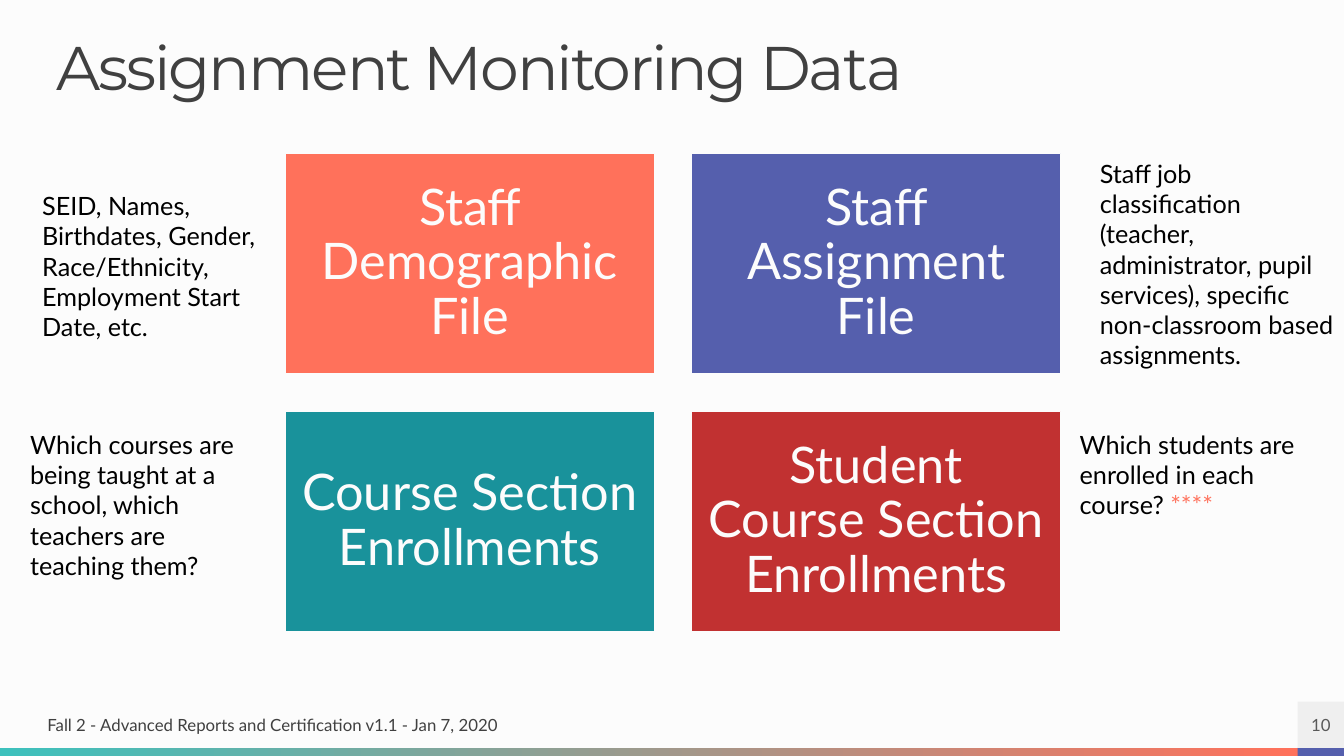
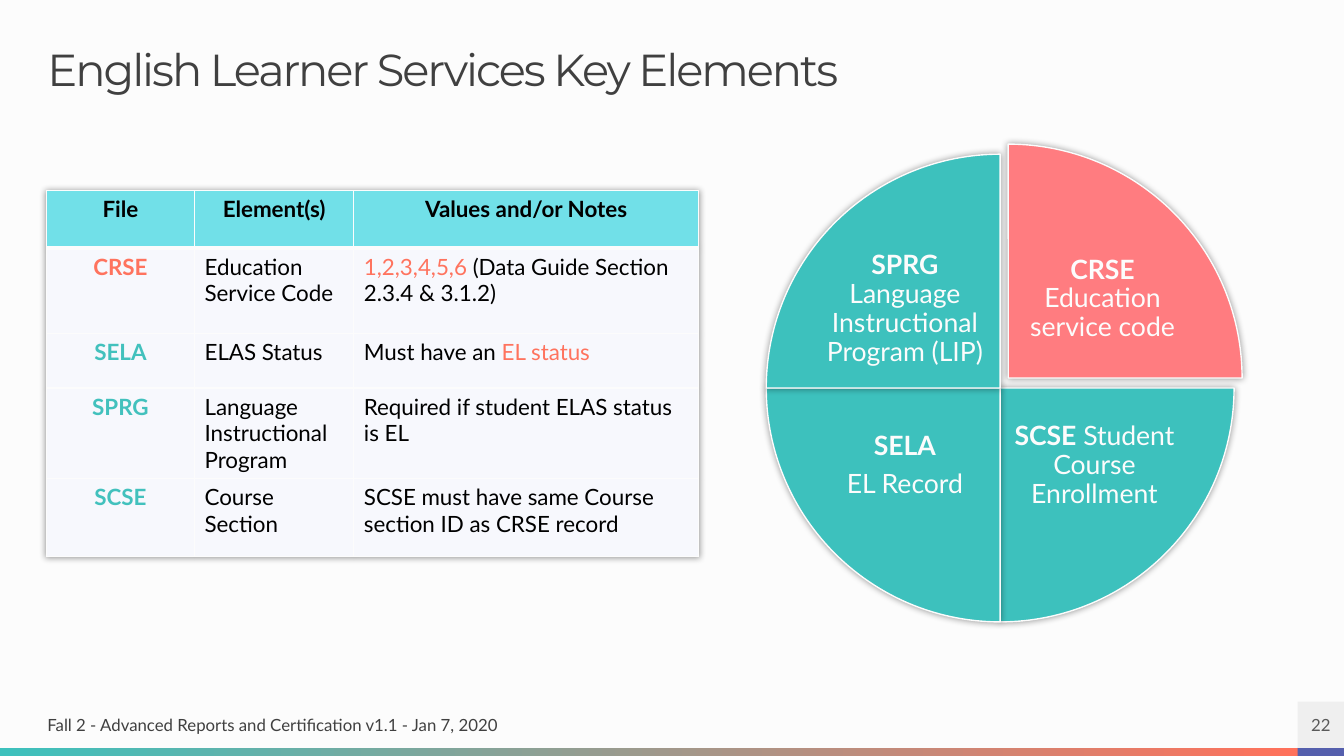
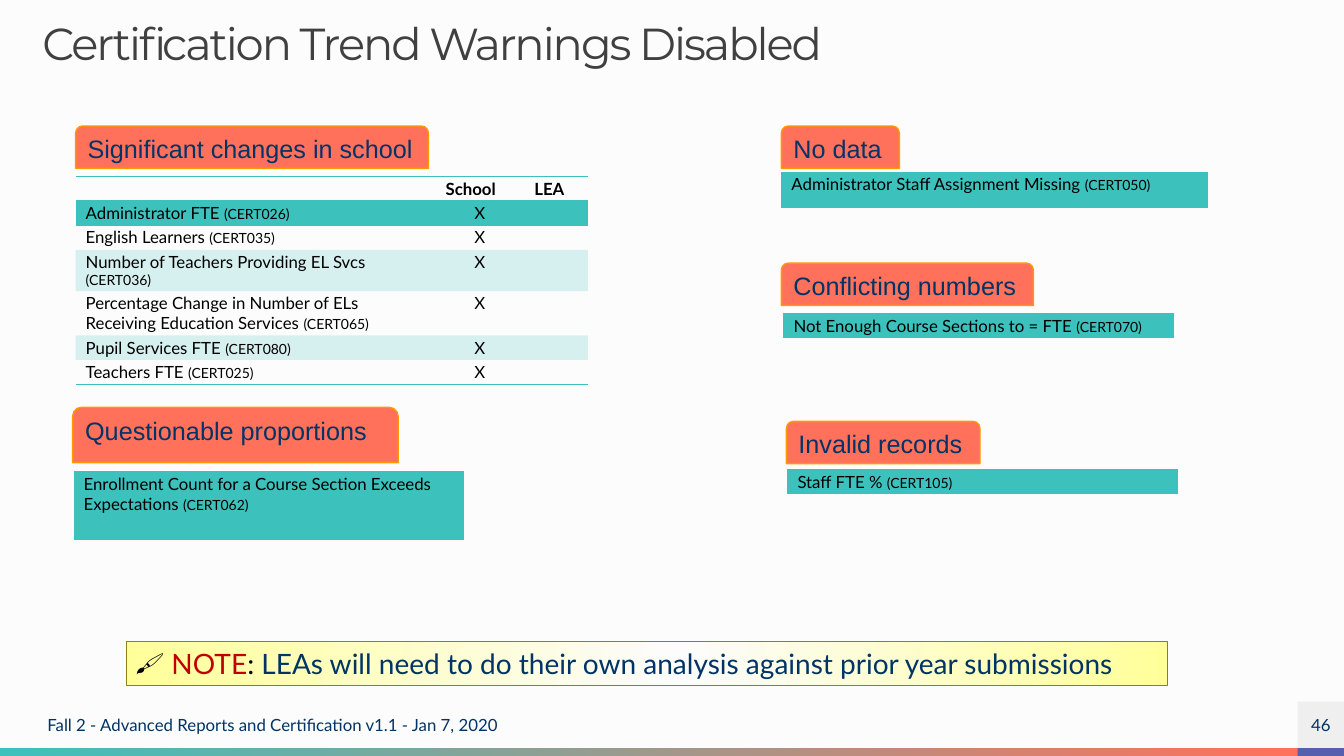
from dataclasses import dataclass

from lxml.etree import SubElement
from pptx import Presentation
from pptx.dml.color import RGBColor
from pptx.enum.shapes import MSO_SHAPE
from pptx.enum.text import MSO_ANCHOR, MSO_AUTO_SIZE, PP_ALIGN
from pptx.oxml.ns import qn
from pptx.util import Inches, Pt


@dataclass(frozen=True)
class Theme:
    heading_font: str = "Montserrat"
    body_font: str = "Lato"
    tab_font: str = "Arial"
    paper: str = "FCFCFC"
    black: str = "000000"
    heading: str = "404040"
    gray: str = "595959"
    navy: str = "003366"
    teal: str = "3DC1BD"
    deep_teal: str = "19929B"
    coral: str = "FF715B"
    pink: str = "FF7C80"
    indigo: str = "555FAD"
    red: str = "C13131"
    note_red: str = "C00000"
    orange: str = "FF9900"
    yellow: str = "FFFF99"
    olive: str = "8E8016"
    badge: str = "EFEFEF"
    table_head: str = "71E0E8"
    table_body: str = "F7F8FD"
    text_coral: str = "FF735E"
    text_teal: str = "42C1BD"
    big: int = 36
    note: int = 20
    pie: int = 19
    body: int = 18
    table: int = 16
    small: int = 12
    code: int = 10


T = Theme()
WIDTH, HEIGHT = 13.33, 7.5
BADGE, BAND = 0.46, 0.08
FOOTER = "Fall 2 - Advanced Reports and Certification v1.1 - Jan 7, 2020"

# A paragraph is a list of runs; a run is a string or (string, changes).
BOLD = {"bold": True}
CORAL = {"color": T.text_coral}
TEAL_BOLD = {"color": T.text_teal, "bold": True}
CODE = {"size": T.code}

FILE_CARDS = [
    ("Staff Demographic File", T.coral),
    ("Staff Assignment File", T.indigo),
    ("Course Section Enrollments", T.deep_teal),
    ("Student Course Section Enrollments", T.red),
]
CARD_NOTES = [
    ((0.32, 1.84, 2.5, 1.62),
     ["SEID, Names, Birthdates, Gender, Race/Ethnicity, Employment Start Date, etc."]),
    ((0.2, 4.21, 2.5, 1.62),
     ["Which courses are being taught at a school, which teachers are teaching them?"]),
    ((10.81, 1.52, 2.52, 2.22),
     ["Staff job classification (teacher, administrator, pupil services), "
      "specific non-classroom based assignments."]),
    ((10.61, 4.21, 2.52, 1.01),
     ["Which students are enrolled in each course? ", ("****", CORAL)]),
]

ELEMENT_HEADS = ["File", "Element(s)", "Values and/or Notes"]
ELEMENT_ROWS = [
    [("CRSE", {**CORAL, **BOLD})], ["Education Service Code"],
    [("1,2,3,4,5,6", CORAL), " (Data Guide Section 2.3.4 & 3.1.2)"],
    [("SELA", TEAL_BOLD)], ["ELAS Status"],
    ["Must have an ", ("EL status", CORAL)],
    [("SPRG", TEAL_BOLD)], ["Language Instructional Program"],
    ["Required if student ELAS status is EL"],
    [("SCSE", TEAL_BOLD)], ["Course Section"],
    ["SCSE must have same Course section ID as CRSE record"],
]
# Quarter slices, clockwise from three o'clock: paragraphs, label left and top
SLICES = [
    ([[("SCSE", BOLD), " Student Course Enrollment"]], 10, 3.93),
    ([[("SELA", BOLD)], ["EL Record"]], 8.12, 3.93),
    ([[("SPRG", BOLD), " Language Instructional Program (LIP)"]], 8.12, 2.38),
    ([[("CRSE", BOLD), " Education service code"]], 10, 2.38),
]

SCHOOL_CHANGES = [
    ("Administrator FTE", "CERT026", 0.24),
    ("English Learners", "CERT035", 0.24),
    ("Number of Teachers Providing EL Svcs", "CERT036", 0.41),
    ("Percentage Change in Number of ELs Receiving Education Services", "CERT065", 0.44),
    ("Pupil Services FTE", "CERT080", 0.24),
    ("Teachers FTE", "CERT025", 0.24),
]
WARNING_TABS = [
    ("Significant changes in school", (0.75, 1.25, 3.5, 0.42)),
    ("No data", (7.75, 1.25, 1.17, 0.42)),
    ("Conflicting numbers", (7.75, 2.61, 2.5, 0.42)),
    ("Questionable proportions", (0.72, 4.04, 3.23, 0.55)),
    ("Invalid records", (7.8, 4.18, 1.92, 0.42)),
]
WARNINGS = [
    ("Administrator Staff Assignment Missing", "CERT050", (7.75, 1.71, 4.23, 0.35)),
    ("Not Enough Course Sections to = FTE", "CERT070", (7.77, 3.11, 3.87, 0.24)),
    ("Enrollment Count for a Course Section Exceeds Expectations", "CERT062",
     (0.73, 4.68, 3.87, 0.67)),
    ("Staff FTE %", "CERT105", (7.81, 4.66, 3.87, 0.24)),
]
NOTE = ["🖌 ", ("NOTE", {"color": T.note_red}), ": ",
        ("LEAs will need to do their own analysis against prior year submissions",
         {"color": T.navy})]


def rgb(value):
    return RGBColor.from_string(value)


def inches(values):
    return [Inches(value) for value in values]


def write(frame, paragraphs, size, color=T.black, font=T.body_font, bold=False,
          align=PP_ALIGN.LEFT, line=None, after=0):
    """Write paragraphs of runs; after is the space between paragraphs."""
    for index, runs in enumerate(paragraphs):
        para = frame.paragraphs[0] if index == 0 else frame.add_paragraph()
        para.alignment = align
        if line:
            para.line_spacing = line
        if after and index < len(paragraphs) - 1:
            para.space_after = Pt(after)
        for run in runs:
            text, changes = (run, {}) if isinstance(run, str) else run
            look = {"size": size, "color": color, "bold": bold, **changes}
            span = para.add_run()
            span.text = text
            span.font.name = font
            span.font.size = Pt(look["size"])
            span.font.bold = look["bold"]
            span.font.color.rgb = rgb(look["color"])
        if not runs:
            SubElement(para._p, qn("a:endParaRPr"), sz=str(size * 100))


def set_frame(frame, anchor=MSO_ANCHOR.TOP, inset=None):
    frame.word_wrap = True
    frame.auto_size = MSO_AUTO_SIZE.NONE
    frame.vertical_anchor = anchor
    if inset is not None:
        frame.margin_left = frame.margin_right = Inches(inset)
        frame.margin_top = frame.margin_bottom = Inches(inset)
    return frame


def add_text(slide, place, paragraphs, size, anchor=MSO_ANCHOR.TOP, inset=None, **look):
    box = slide.shapes.add_textbox(*inches(place))
    write(set_frame(box.text_frame, anchor, inset), paragraphs, size, **look)


def add_shape(slide, kind, place, fill=None, line=None, weight=1):
    shape = slide.shapes.add_shape(kind, *inches(place))
    shape.shadow.inherit = False
    if fill:
        shape.fill.solid()
        shape.fill.fore_color.rgb = rgb(fill)
    if line:
        shape.line.color.rgb = rgb(line)
        shape.line.width = Pt(weight)
    else:
        shape.line.fill.background()
    return shape


def set_gradient(shape, stops):
    shape.fill.gradient()
    shape.fill.gradient_angle = 0
    stop_list = shape.element.spPr.find(".//" + qn("a:gsLst"))
    for stop in list(stop_list):
        stop_list.remove(stop)
    for share, color in stops:
        stop = SubElement(stop_list, qn("a:gs"), pos=str(share * 1000))
        SubElement(stop, qn("a:srgbClr"), val=color)


def add_glow(effects):
    """Add a soft shadow without offset to an effect list."""
    shadow = SubElement(effects, qn("a:outerShdw"), blurRad=str(Pt(5)), dist="0")
    color = SubElement(shadow, qn("a:srgbClr"), val=T.black)
    SubElement(color, qn("a:alpha"), val="40000")


def set_borders(cell, borders):
    """Borders map a side (L, R, T, B) to (colour, points)."""
    properties = cell._tc.get_or_add_tcPr()
    sides = [side for side in "LRTB" if side in borders]
    for index, side in enumerate(sides):
        color, weight = borders[side]
        line = SubElement(properties, qn("a:ln" + side), w=str(Pt(weight)))
        SubElement(SubElement(line, qn("a:solidFill")), qn("a:srgbClr"), val=color)
        properties.insert(index, line)


def set_fill(cell, color, share=100):
    if not color:
        cell.fill.background()
        return
    cell.fill.solid()
    cell.fill.fore_color.rgb = rgb(color)
    if share < 100:
        color_node = cell._tc.tcPr.find(".//" + qn("a:srgbClr"))
        SubElement(color_node, qn("a:alpha"), val=str(share * 1000))


def add_table(slide, left, top, columns, rows):
    """Add a table with no style of its own."""
    place = inches((left, top, sum(columns), sum(rows)))
    table = slide.shapes.add_table(len(rows), len(columns), *place).table
    table.first_row = table.horz_banding = False
    table._tbl.tblPr.find(qn("a:tableStyleId")).text = \
        "{2D5ABB26-0587-4C30-8999-92F81FD0307C}"
    for column, width in zip(table.columns, columns):
        column.width = Inches(width)
    for row, height in zip(table.rows, rows):
        row.height = Inches(height)
    return table


def write_warning_cell(cell, runs, tinted, sides, **look):
    cell.margin_top = cell.margin_bottom = Inches(0.02)
    write(cell.text_frame, [runs], T.small, **look)
    set_borders(cell, {side: (T.teal, 1) for side in sides})
    set_fill(cell, T.teal if tinted else None, 20)


def warning_runs(label, code):
    return [label + " ", (f"({code})", CODE)]


def dress_master(deck, slide):
    """Give the master its background and bottom bands, drawn on slide first."""
    master = deck.slide_master
    master.background.fill.solid()
    master.background.fill.fore_color.rgb = rgb(T.paper)
    split, top = WIDTH - BADGE, HEIGHT - BAND
    band = add_shape(slide, MSO_SHAPE.RECTANGLE, (0, top, split, BAND))
    set_gradient(band, [(0, T.teal), (100, T.coral)])
    corner = add_shape(slide, MSO_SHAPE.RECTANGLE, (split, top, BADGE, BAND), T.indigo)
    for shape in (band, corner):
        master.shapes.element.append(shape.element)


def add_slide(deck, title, place, size, number, footer_color=T.heading,
              number_color=T.gray):
    slide = deck.slides.add_slide(deck.slide_layouts[5])
    heading = slide.shapes.title
    heading.left, heading.top, heading.width, heading.height = inches(place)
    frame = set_frame(heading.text_frame, inset=0)
    write(frame, [[title]], size, T.heading, T.heading_font, line=0.9)
    frame.paragraphs[0].runs[0]._r.get_or_add_rPr().set("spc", "-150")
    top = HEIGHT - BAND - BADGE
    add_text(slide, (0.47, top, 5.98, BADGE), [[FOOTER]], T.small,
             MSO_ANCHOR.MIDDLE, 0, color=footer_color)
    badge = add_shape(slide, MSO_SHAPE.RECTANGLE,
                      (WIDTH - BADGE, top, BADGE, BADGE), T.badge)
    write(set_frame(badge.text_frame, MSO_ANCHOR.MIDDLE, 0), [[str(number)]],
          T.small, number_color, align=PP_ALIGN.CENTER)
    return slide


def build_monitoring(deck):
    slide = add_slide(deck, "Assignment Monitoring Data", (0.56, 0.37, 9.3, 0.75), 44, 10)
    dress_master(deck, slide)
    width, height, gap = 3.66, 2.19, 0.37
    for index, (label, color) in enumerate(FILE_CARDS):
        row, column = divmod(index, 2)
        place = (2.83 + column * (width + gap), 1.52 + row * (height + gap), width, height)
        card = add_shape(slide, MSO_SHAPE.RECTANGLE, place, color, T.paper)
        write(set_frame(card.text_frame, MSO_ANCHOR.MIDDLE, 0.15), [[label]],
              T.big, T.paper, align=PP_ALIGN.CENTER, line=0.9)
    for place, runs in CARD_NOTES:
        add_text(slide, place, [runs], T.body)


def build_key_elements(deck):
    slide = add_slide(deck, "English Learner Services Key Elements",
                      (0.47, 0.47, 12.4, 0.47), 32, 22)
    quarter, size = 54, 4.64
    for index in (3, 0, 1, 2):
        paragraphs, left, top = SLICES[index]
        pulled = index == 3
        right, down = (0.08, -0.1) if pulled else (0, 0)
        piece = add_shape(slide, MSO_SHAPE.PIE, (7.6 + right, 1.53 + down, size, size),
                          T.pink if pulled else T.teal, T.paper)
        piece.adjustments[0] = quarter * index
        piece.adjustments[1] = quarter * ((index + 1) % 4)
        add_glow(piece.element.spPr.find(qn("a:effectLst")))
        add_text(slide, (left + right, top + down, 1.71, 1.38), paragraphs, T.pie,
                 MSO_ANCHOR.MIDDLE, 0.03, color=T.paper, align=PP_ALIGN.CENTER,
                 line=0.9, after=6.65)

    columns = [1.47, 1.58, 3.42]
    table = add_table(slide, 0.46, 1.89, columns, [0.57, 0.85, 0.54, 0.9, 0.77])
    effects = SubElement(table._tbl.tblPr, qn("a:effectLst"))
    table._tbl.tblPr.insert(0, effects)
    add_glow(effects)
    contents = [[head] for head in ELEMENT_HEADS] + ELEMENT_ROWS
    for index, runs in enumerate(contents):
        row, column = divmod(index, len(columns))
        cell = table.cell(row, column)
        centred = row == 0 or column == 0
        write(cell.text_frame, [runs], T.table, bold=row == 0,
              align=PP_ALIGN.CENTER if centred else PP_ALIGN.LEFT)
        borders = {side: (T.paper, 1) for side in "LRTB"}
        if row < 2:
            borders["T" if row else "B"] = (T.paper, 3)
        set_borders(cell, borders)
        set_fill(cell, T.table_body if row else T.table_head)


def build_warnings(deck):
    slide = add_slide(deck, "Certification Trend Warnings Disabled",
                      (0.42, 0.22, 10.43, 0.58), 32, 46, T.navy, T.navy)
    note = add_shape(slide, MSO_SHAPE.RECTANGLE, (1.25, 6.36, 10.33, 0.44),
                     line=T.olive, weight=0.5)
    set_gradient(note, [(0, T.yellow), (53, T.paper), (100, T.yellow)])
    write(set_frame(note.text_frame), [NOTE], T.note)

    for label, place in WARNING_TABS:
        tab = add_shape(slide, MSO_SHAPE.ROUND_2_SAME_RECTANGLE, place, T.coral, T.orange)
        write(set_frame(tab.text_frame), [[label]], T.body, T.navy, T.tab_font)

    for label, code, (left, top, width, height) in WARNINGS:
        table = add_table(slide, left, top, [width], [height])
        write_warning_cell(table.cell(0, 0), warning_runs(label, code), True, "TB")

    heights = [0.24] + [height for _, _, height in SCHOOL_CHANGES]
    table = add_table(slide, 0.75, 1.75, [3.57, 0.88, 0.63], heights)
    for column, runs in enumerate([[], ["School"], ["LEA"]]):
        write_warning_cell(table.cell(0, column), runs, False, "TB", bold=True)
    for row, (label, code, _) in enumerate(SCHOOL_CHANGES, start=1):
        sides = "T" if row == 1 else "B" if row == len(SCHOOL_CHANGES) else ""
        for column, runs in enumerate([warning_runs(label, code), ["X"], []]):
            write_warning_cell(table.cell(row, column), runs, row % 2 == 1, sides,
                               align=PP_ALIGN.CENTER if column == 1 else PP_ALIGN.LEFT)


def main():
    deck = Presentation()
    deck.slide_width, deck.slide_height = Inches(WIDTH), Inches(HEIGHT)
    build_monitoring(deck)
    build_key_elements(deck)
    build_warnings(deck)
    deck.save("out.pptx")


if __name__ == "__main__":
    main()
